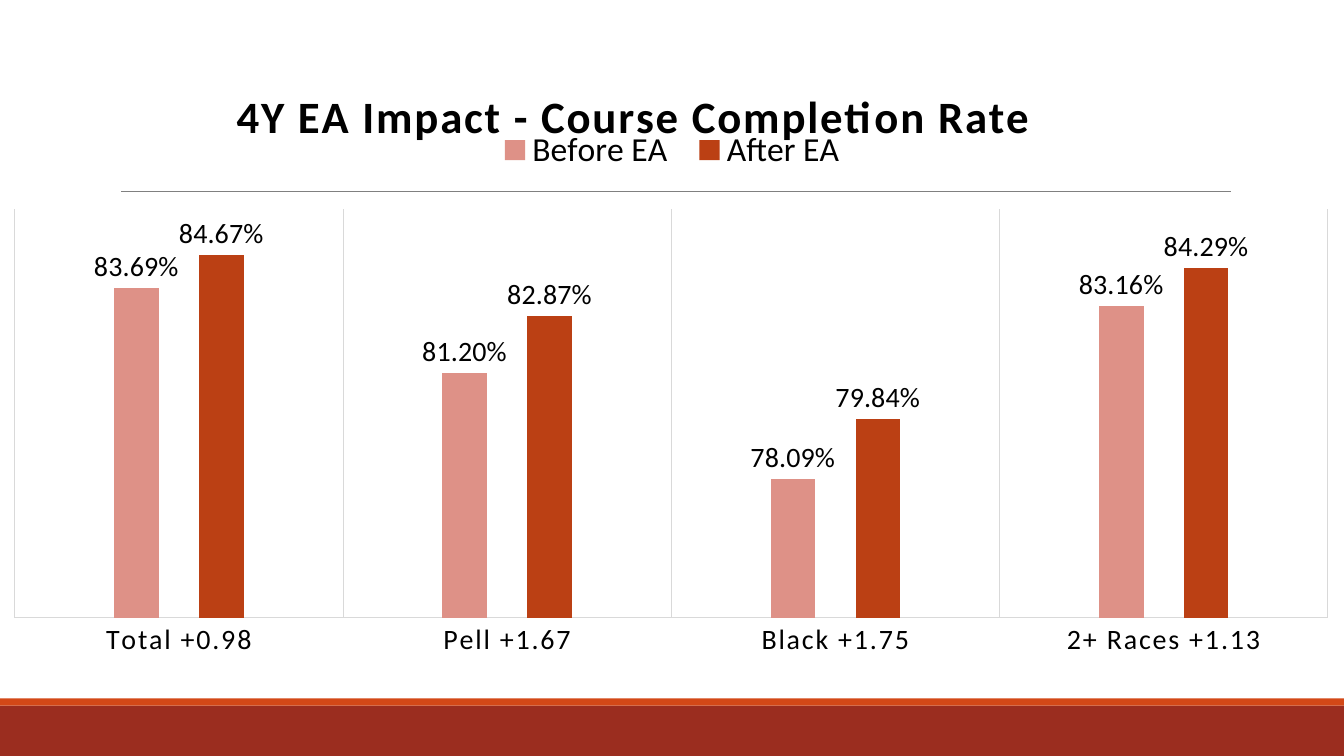
from lxml.etree import SubElement
from pptx import Presentation
from pptx.chart.data import CategoryChartData
from pptx.dml.color import RGBColor
from pptx.enum.chart import XL_CHART_TYPE, XL_LABEL_POSITION, XL_LEGEND_POSITION, XL_TICK_MARK
from pptx.enum.shapes import MSO_CONNECTOR, MSO_SHAPE
from pptx.oxml import parse_xml
from pptx.oxml.ns import nsdecls, qn
from pptx.util import Cm, Pt

WIDTH, HEIGHT, CHART_HEIGHT = 33.87, 19.05, 17.6
PERCENT = "0.00%"
CATEGORIES = ["Total +0.98", "Pell +1.67", "Black +1.75", "2+ Races +1.13"]
SERIES = [
    ("Before EA", [0.8369, 0.812, 0.7809, 0.8316], "DE9187"),
    ("After EA", [0.8467, 0.8287, 0.7984, 0.8429], "BB4014"),
]


def color(hex_string):
    return RGBColor.from_string(hex_string)


def style_font(font, size, bold=False):
    font.name = "Calibri"
    font.size = Pt(size)
    font.bold = bold
    font.color.rgb = color("000000")


def style_line(line, hex_string, width):
    line.color.rgb = color(hex_string)
    line.width = Pt(width)


def add_band(slide, top, height, fill):
    band = slide.shapes.add_shape(MSO_SHAPE.RECTANGLE, 0, Cm(top), Cm(WIDTH), Cm(height))
    band.shadow.inherit = False
    band.fill.solid()
    band.fill.fore_color.rgb = color(fill)
    band.line.fill.background()


def add_rule(slide, left, right, top):
    rule = slide.shapes.add_connector(
        MSO_CONNECTOR.STRAIGHT, Cm(left), Cm(top), Cm(right), Cm(top))
    style_line(rule.line, "808080", 0.5)
    SubElement(rule.element.spPr, qn("a:effectLst"))


def set_layout(element, position, inner=False, **fractions):
    """Place a chart part by fractions of the chart area."""
    for layout in element.findall(qn("c:layout")):
        element.remove(layout)
    settings = '<c:layoutTarget val="inner"/>' if inner else ""
    settings += '<c:xMode val="edge"/><c:yMode val="edge"/>'
    settings += "".join(f'<c:{name} val="{value}"/>' for name, value in fractions.items())
    element.insert(position, parse_xml(
        f'<c:layout {nsdecls("c")}><c:manualLayout>{settings}</c:manualLayout></c:layout>'))


def set_spacing(chart, part, spacing):
    for properties in chart.element.xpath(f".//{part}//a:defRPr"):
        properties.set("spc", str(spacing))


def style_title_and_legend(chart):
    chart.has_title = True
    frame = chart.chart_title.text_frame
    frame.text = "4Y EA Impact - Course Completion Rate"
    style_font(frame.paragraphs[0].font, 32, bold=True)
    set_spacing(chart, "c:title", 120)
    set_layout(chart.element.xpath(".//c:title")[0], 1, x=0.17, y=0.11)

    chart.has_legend = True
    chart.legend.position = XL_LEGEND_POSITION.TOP
    chart.legend.include_in_layout = False
    style_font(chart.legend.font, 24)
    set_layout(chart.element.xpath(".//c:legend")[0], 1, x=0.36, y=0.18, w=0.28, h=0.07)


def style_axes(chart):
    category_axis = chart.category_axis
    category_axis.major_tick_mark = XL_TICK_MARK.NONE
    category_axis.has_major_gridlines = True
    for line in (category_axis.format.line, category_axis.major_gridlines.format.line):
        style_line(line, "D9D9D9", 0.75)
    style_font(category_axis.tick_labels.font, 20)
    set_spacing(chart, "c:catAx", 120)

    value_axis = chart.value_axis
    value_axis.minimum_scale = 0.74
    value_axis.maximum_scale = 0.86
    value_axis.has_major_gridlines = False
    value_axis.visible = False


def style_columns(chart):
    plot = chart.plots[0]
    plot.gap_width = 444
    plot.overlap = -90
    plot.vary_by_categories = False
    for series, (_, _, fill) in zip(plot.series, SERIES):
        series.format.fill.solid()
        series.format.fill.fore_color.rgb = color(fill)
        labels = series.data_labels
        labels.show_value = True
        labels.position = XL_LABEL_POSITION.OUTSIDE_END
        labels.number_format = PERCENT
        labels.number_format_is_linked = False
        style_font(labels.font, 20)


def add_completion_chart(slide):
    data = CategoryChartData(number_format=PERCENT)
    data.categories = CATEGORIES
    for name, values, _ in SERIES:
        data.add_series(name, values)
    chart = slide.shapes.add_chart(
        XL_CHART_TYPE.COLUMN_CLUSTERED, 0, 0, Cm(WIDTH), Cm(CHART_HEIGHT), data).chart
    style_font(chart.font, 24)
    style_title_and_legend(chart)
    style_axes(chart)
    style_columns(chart)
    set_layout(chart.element.xpath(".//c:plotArea")[0], 0, inner=True,
               x=0.011, y=0.3, w=0.977, h=0.585)


def main():
    presentation = Presentation()
    presentation.slide_width = Cm(WIDTH)
    presentation.slide_height = Cm(HEIGHT)
    slide = presentation.slides.add_slide(presentation.slide_layouts[6])

    # Footer bands and rule
    add_band(slide, 17.78, 1.27, "9B2D1F")
    add_band(slide, CHART_HEIGHT, 0.18, "D34817")
    add_rule(slide, 3.05, 31.01, 4.83)

    # Chart with its own title
    add_completion_chart(slide)

    presentation.save("out.pptx")


if __name__ == "__main__":
    main()
